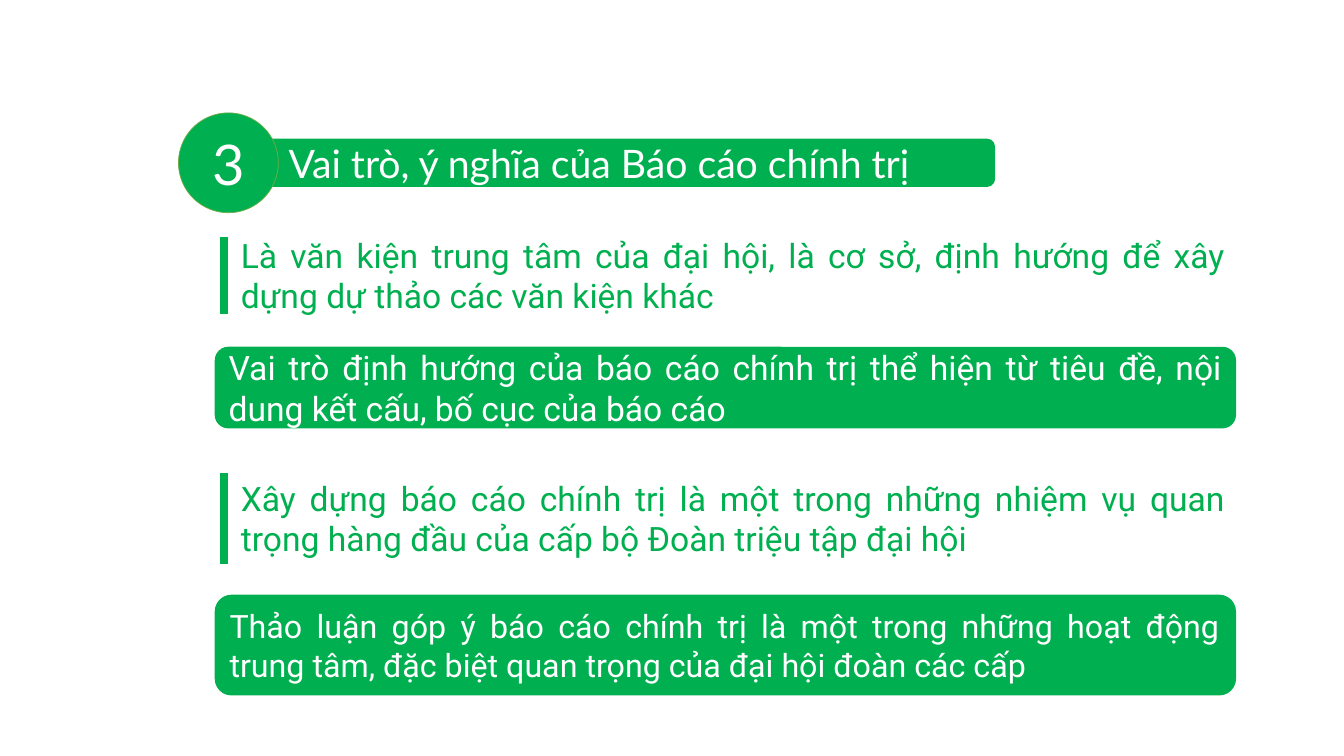
from pptx import Presentation
from pptx.dml.color import RGBColor
from pptx.enum.shapes import MSO_CONNECTOR, MSO_SHAPE
from pptx.enum.text import MSO_ANCHOR, PP_ALIGN
from pptx.oxml.ns import qn
from pptx.util import Inches, Pt
from lxml.etree import SubElement

GREEN, OLIVE, WHITE = "00B050", "70AD47", "FFFFFF"
POINTS = [
    ("bar", 2.28, 0.91, 24, "Là văn kiện trung tâm của đại hội, là cơ sở, định hướng để xây dựng dự thảo các văn kiện khác"),
    ("panel", 3.44, 0.81, 24, "Vai trò định hướng của báo cáo chính trị thể hiện từ tiêu đề, nội dung kết cấu, bố cục của báo cáo"),
    ("bar", 4.69, 0.91, 24, "Xây dựng báo cáo chính trị là một trong những nhiệm vụ quan trọng hàng đầu của cấp bộ Đoàn triệu tập đại hội"),
    ("panel", 5.9, 1, 23, "Thảo luận góp ý báo cáo chính trị là một trong những hoạt động trung tâm, đặc biệt quan trọng của đại hội đoàn các cấp"),
]
BAR_INSETS = [(0.07, 0.07), (0, 0)]


def color(value):
    """Turn a hex string into a colour."""
    return RGBColor.from_string(value)


def write(shape, text, size, font_name, font_color, alignment, anchor=MSO_ANCHOR.MIDDLE):
    """Put one formatted paragraph in a shape and return it."""
    frame = shape.text_frame
    frame.text = text
    frame.word_wrap = True
    frame.vertical_anchor = anchor
    paragraph = frame.paragraphs[0]
    paragraph.alignment = alignment
    font = paragraph.runs[0].font
    font.size, font.name = Pt(size), font_name
    font.color.rgb = color(font_color)
    return paragraph


def add_filled(slide, kind, left, top, width, height):
    """Add a green shape without outline or shadow."""
    shape = slide.shapes.add_shape(kind, Inches(left), Inches(top), Inches(width), Inches(height))
    shape.shadow.inherit = False
    shape.fill.solid()
    shape.fill.fore_color.rgb = color(GREEN)
    shape.line.fill.background()
    return shape


def add_heading(slide, left, top, diameter, number, title):
    """Add the title bar with its numbered circle."""
    bar_height = 0.48
    bar_top = top + (diameter - bar_height) / 2
    bar = add_filled(slide, MSO_SHAPE.ROUNDED_RECTANGLE, left + 0.77, bar_top, 7.33, bar_height)
    paragraph = write(bar, title, 28, "Lato", WHITE, PP_ALIGN.LEFT)
    paragraph._p.get_or_add_pPr().set("indent", str(Inches(0.2)))
    circle = add_filled(slide, MSO_SHAPE.OVAL, left, top, diameter, diameter)
    circle.line.color.rgb = color(OLIVE)
    circle.line.width = Pt(0.5)
    write(circle, number, 40, "Lato", WHITE, PP_ALIGN.CENTER)


def add_bar_point(slide, left, top, width, height, size, text, insets):
    """Add a green text with a thick vertical rule on its left."""
    box = slide.shapes.add_textbox(Inches(left + 0.16), Inches(top), Inches(width - 0.17), Inches(height))
    write(box, text, size, "Roboto", GREEN, PP_ALIGN.JUSTIFY, MSO_ANCHOR.TOP)
    rule_left = Inches(left + 0.09)
    rule = slide.shapes.add_connector(
        MSO_CONNECTOR.STRAIGHT, rule_left, Inches(top + insets[0]), rule_left, Inches(top + height - insets[1]))
    rule.line.color.rgb = color(GREEN)
    rule.line.width = Pt(6)
    SubElement(rule._element.spPr, qn("a:effectLst"))


def add_panel_point(slide, left, top, width, height, size, text):
    """Add a white text on a rounded green panel."""
    panel = add_filled(slide, MSO_SHAPE.ROUNDED_RECTANGLE, left, top, width, height)
    write(panel, text, size, "Roboto", WHITE, PP_ALIGN.JUSTIFY)


def add_points(slide, left, width):
    """Add the alternating bar and panel points down one column."""
    insets = iter(BAR_INSETS)
    for kind, top, height, size, text in POINTS:
        if kind == "bar":
            add_bar_point(slide, left, top, width, height, size, text, next(insets))
        else:
            add_panel_point(slide, left, top, width, height, size, text)


def main():
    """Build and save the slide."""
    presentation = Presentation()
    presentation.slide_width, presentation.slide_height = Inches(13.33), Inches(7.5)
    slide = presentation.slides.add_slide(presentation.slide_layouts[6])
    add_heading(slide, 1.77, 1.12, 0.99, "3", "Vai trò, ý nghĩa của Báo cáo chính trị")
    add_points(slide, 2.13, 10.13)
    presentation.save("out.pptx")


if __name__ == "__main__":
    main()
